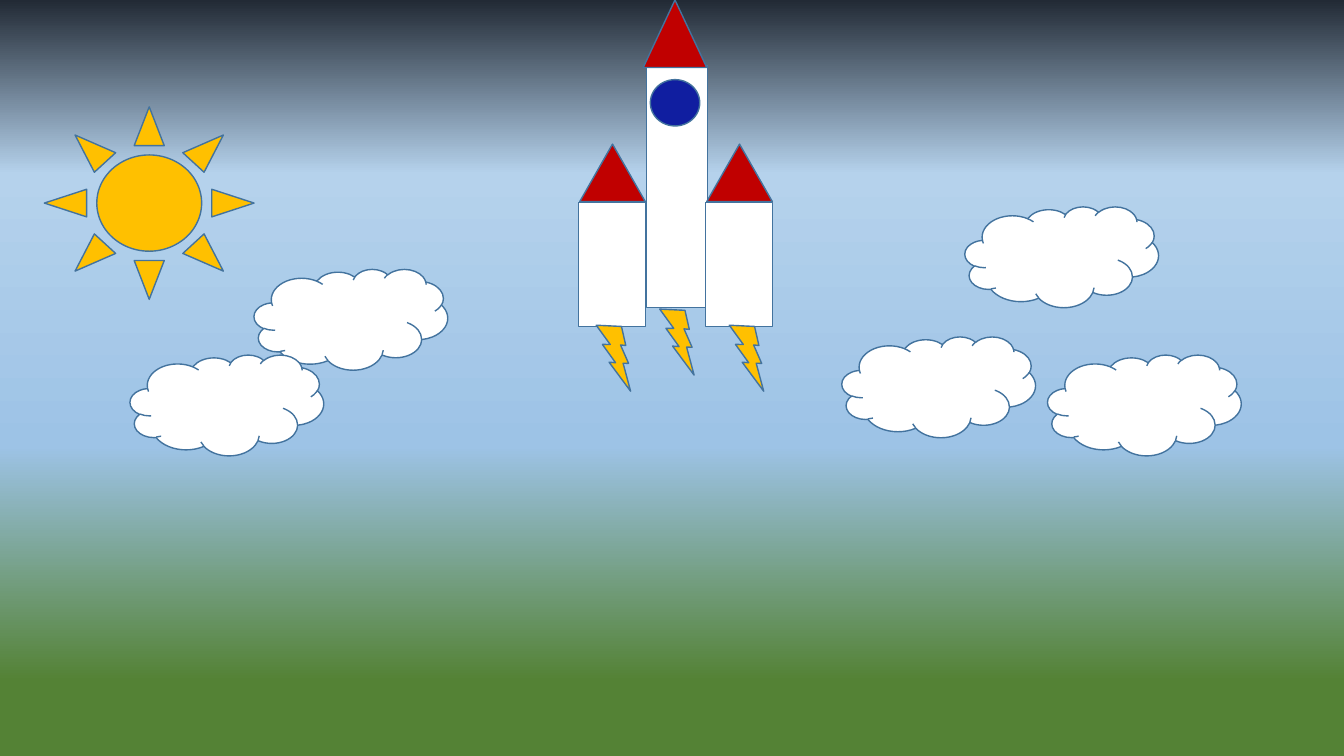
from lxml import etree
from pptx import Presentation
from pptx.dml.color import RGBColor
from pptx.enum.shapes import MSO_SHAPE
from pptx.oxml.ns import qn
from pptx.util import Inches, Pt

RECT = MSO_SHAPE.RECTANGLE
CONE = MSO_SHAPE.ISOSCELES_TRIANGLE
BOLT = MSO_SHAPE.LIGHTNING_BOLT
OVAL = MSO_SHAPE.OVAL
SUN = MSO_SHAPE.SUN
CLOUD = MSO_SHAPE.CLOUD

WHITE = RGBColor(0xFF, 0xFF, 0xFF)
RED = RGBColor(0xC0, 0x00, 0x00)
GOLD = RGBColor(0xFF, 0xC0, 0x00)
NAVY = RGBColor(0x10, 0x1E, 0xA0)
EDGE = RGBColor(0x43, 0x73, 0x9E)
SPACE = RGBColor(0x22, 0x2A, 0x35)
HAZE = RGBColor(0xB5, 0xD2, 0xEC)
SKY = RGBColor(0x9D, 0xC3, 0xE6)
GRASS = RGBColor(0x54, 0x82, 0x35)

STOPS = [(0, SPACE), (23, HAZE), (59, SKY), (90, GRASS)]
CLOUDS = [(2.52, 2.67), (1.29, 3.52), (8.35, 3.34), (10.39, 3.52), (9.57, 2.05)]


def paint_sky(slide):
    """Fill the background with a gradient from space down to grass."""
    fill = slide.background.fill
    fill.gradient()
    fill.gradient_angle = 270
    stops = next(slide.element.iter(qn("a:gsLst")))
    for stop in list(stops):
        stops.remove(stop)
    for place, color in STOPS:
        stop = etree.SubElement(stops, qn("a:gs"), pos=str(place * 1000))
        etree.SubElement(stop, qn("a:srgbClr"), val=str(color))


def add_part(shapes, kind, color, left, top, width, height, turn=0):
    """Add one outlined shape to a slide or a group."""
    part = shapes.add_shape(
        kind, Inches(left), Inches(top), Inches(width), Inches(height))
    part.shadow.inherit = False
    part.fill.solid()
    part.fill.fore_color.rgb = color
    part.line.color.rgb = EDGE
    part.line.width = Pt(1)
    part.rotation = turn


def add_rocket(slide):
    """Add the rocket: hull, two boosters, nose cones, flames and window."""
    parts = slide.shapes.add_group_shape().shapes
    add_part(parts, RECT, WHITE, 6.41, 0.65, 0.61, 2.4)
    for left in (5.74, 7):
        add_part(parts, RECT, WHITE, left, 2.01, 0.66, 1.23)
    add_part(parts, CONE, RED, 6.38, 0, 0.63, 0.67)
    for left in (5.75, 7.01):
        add_part(parts, CONE, RED, left, 1.43, 0.65, 0.57)
    for left, top in ((5.81, 3.24), (6.44, 3.08), (7.13, 3.24)):
        add_part(parts, BOLT, GOLD, left, top, 0.59, 0.54, turn=25.6)
    add_part(parts, OVAL, NAVY, 6.45, 0.79, 0.49, 0.46)


def add_clouds(slide):
    """Add the group of equal clouds."""
    parts = slide.shapes.add_group_shape().shapes
    for left, top in CLOUDS:
        add_part(parts, CLOUD, WHITE, left, top, 1.92, 1)


def main():
    """Build the slide and save it."""
    deck = Presentation()
    deck.slide_width = Inches(13.33)
    deck.slide_height = Inches(7.5)
    slide = deck.slides.add_slide(deck.slide_layouts[6])
    paint_sky(slide)
    add_rocket(slide)
    add_part(slide.shapes, SUN, GOLD, 0.44, 1.06, 2.08, 1.91)
    add_clouds(slide)
    deck.save("out.pptx")


if __name__ == "__main__":
    main()
